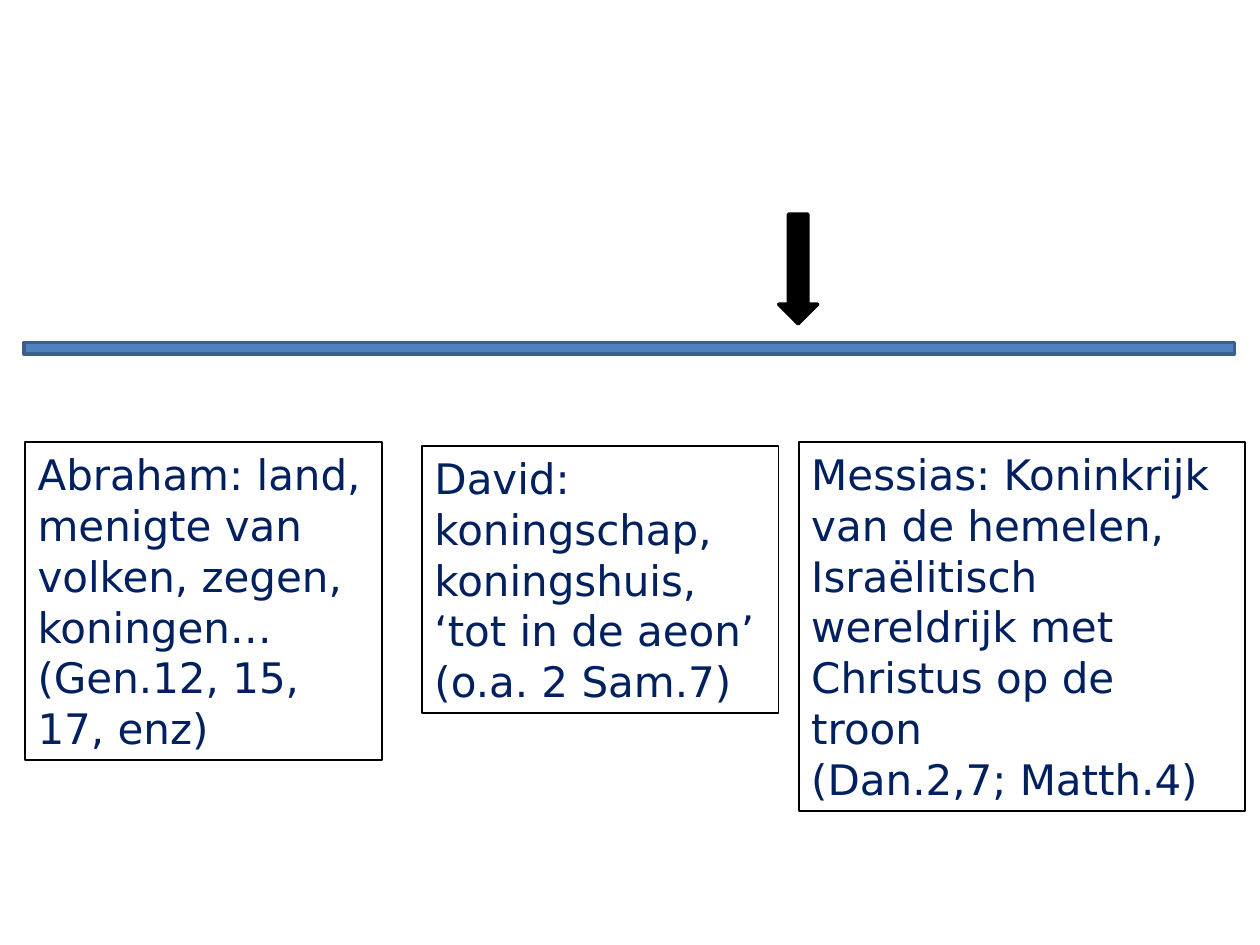
from pptx import Presentation
from pptx.dml.color import RGBColor
from pptx.enum.shapes import MSO_SHAPE
from pptx.enum.text import MSO_ANCHOR, MSO_AUTO_SIZE, PP_ALIGN
from pptx.util import Inches, Pt

MINUS = MSO_SHAPE.MATH_MINUS
DOWN_ARROW = MSO_SHAPE.DOWN_ARROW
RECTANGLE = MSO_SHAPE.RECTANGLE
TOP = MSO_ANCHOR.TOP
LEFT = PP_ALIGN.LEFT
GROW = MSO_AUTO_SIZE.SHAPE_TO_FIT_TEXT

BLACK = RGBColor(0x00, 0x00, 0x00)
NAVY = RGBColor(0x00, 0x20, 0x60)
BLUE = RGBColor(0x4F, 0x81, 0xBD)
DARK_BLUE = RGBColor(0x3A, 0x5F, 0x8C)

PROMISES = [
    (0.2, 3.51, 2.83, 2.52,
     ["Abraham: land, menigte van volken, zegen, koningen…",
      "(Gen.12, 15, 17, enz)"]),
    (3.35, 3.54, 2.83, 2.12,
     ["David: koningschap, koningshuis, ‘tot in de aeon’",
      "(o.a. 2 Sam.7)"]),
    (6.34, 3.51, 3.54, 2.93,
     ["Messias: Koninkrijk van de hemelen, Israëlitisch wereldrijk "
      "met Christus op de troon",
      "(Dan.2,7; Matth.4)"]),
]


class TimelineSlide:
    font = "DejaVu Sans"
    size = Pt(24)
    spacing = Pt(29)

    def __init__(self, deck):
        self.slide = deck.slides.add_slide(deck.slide_layouts[6])

    def shape(self, kind, left, top, width, height, line, weight, fill=None):
        shape = self.slide.shapes.add_shape(
            kind, Inches(left), Inches(top), Inches(width), Inches(height))
        shape.shadow.inherit = False
        if fill is None:
            shape.fill.background()
        else:
            shape.fill.solid()
            shape.fill.fore_color.rgb = fill
        shape.line.color.rgb = line
        shape.line.width = Pt(weight)
        return shape

    def text_box(self, left, top, width, height, lines):
        box = self.shape(RECTANGLE, left, top, width, height, BLACK, 1)
        frame = box.text_frame
        frame.word_wrap = True
        frame.auto_size = GROW
        frame.vertical_anchor = TOP
        for index, text in enumerate(lines):
            para = frame.add_paragraph() if index else frame.paragraphs[0]
            para.alignment = LEFT
            para.line_spacing = self.spacing
            span = para.add_run()
            span.text = text
            span.font.name = self.font
            span.font.size = self.size
            span.font.color.rgb = NAVY


def main():
    deck = Presentation()
    deck.slide_width = Inches(10)
    deck.slide_height = Inches(7.5)
    page = TimelineSlide(deck)
    page.shape(MINUS, -1.54, 2.57, 13.07, 0.39, DARK_BLUE, 2, BLUE)
    for left, top, width, height, lines in PROMISES:
        page.text_box(left, top, width, height, lines)
    page.shape(DOWN_ARROW, 6.18, 1.7, 0.31, 0.87, BLACK, 2, BLACK)
    deck.save("out.pptx")


if __name__ == "__main__":
    main()
